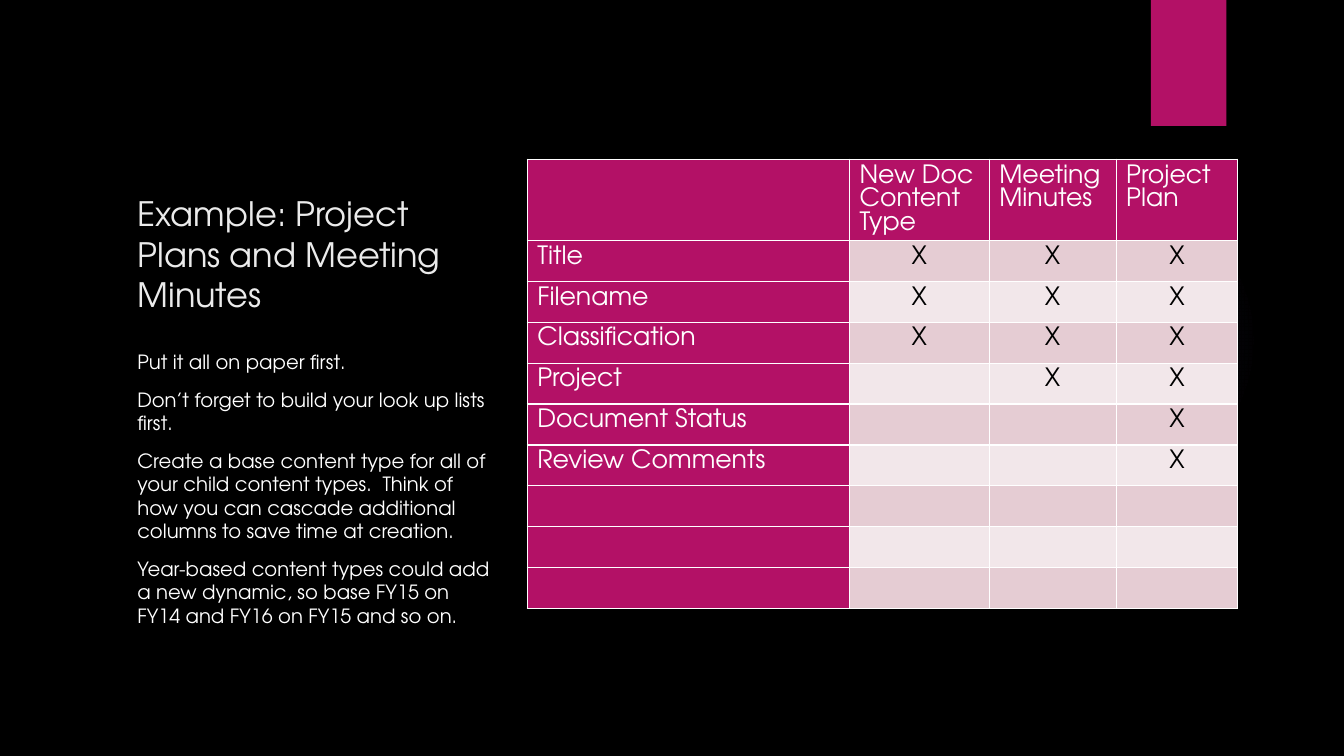
from typing import NamedTuple

from lxml import etree
from pptx import Presentation
from pptx.dml.color import RGBColor
from pptx.enum.shapes import MSO_SHAPE
from pptx.enum.text import MSO_ANCHOR, MSO_AUTO_SIZE, PP_ALIGN
from pptx.oxml import parse_xml
from pptx.oxml.ns import nsdecls, qn
from pptx.util import Pt

LEFT, CENTER = PP_ALIGN.LEFT, PP_ALIGN.CENTER
TOP, BOTTOM = MSO_ANCHOR.TOP, MSO_ANCHOR.BOTTOM
NO_FIT = MSO_AUTO_SIZE.NONE
OVAL, RECTANGLE = MSO_SHAPE.OVAL, MSO_SHAPE.RECTANGLE

FONT = "TeX Gyre Adventor"
BLACK = RGBColor(0x00, 0x00, 0x00)
WHITE = RGBColor(0xFF, 0xFF, 0xFF)
OFF_WHITE = RGBColor(0xEB, 0xEB, 0xEB)
MAGENTA = RGBColor(0xB3, 0x11, 0x66)
BANDS = (RGBColor(0xE5, 0xCC, 0xD3), RGBColor(0xF2, 0xE7, 0xEA))
GLOW = RGBColor(0x9B, 0x6B, 0xF2)
GLOW_STOPS = ((0, 7), (36, 6), (69, 0))

TEXT_LEFT, TEXT_WIDTH = 91, 267.8
COLUMN_WIDTHS = (230.2, 99.8, 90.7, 86.9)
HEADER_HEIGHT, ROW_HEIGHT = 58, 29.2


class Row(NamedTuple):
    label: str
    marks: str


HEADERS = ("", "New Doc Content Type", "Meeting Minutes", "Project Plan")
ROWS = (
    Row("Title", "XXX"),
    Row("Filename", "XXX"),
    Row("Classification", "XXX"),
    Row("Project", "-XX"),
    Row("Document Status", "--X"),
    Row("Review Comments", "--X"),
    Row("", "---"),
    Row("", "---"),
    Row("", "---"),
)
ADVICE = (
    "Put it all on paper first.",
    "Don’t forget to build your look up lists first.",
    "Create a base content type for all of your child content types.  Think of "
    "how you can cascade additional columns to save time at creation.",
    "Year-based content types could add a new dynamic, so base FY15 on FY14 "
    "and FY16 on FY15 and so on.",
)


def add_run(p, text: str, size: float, color: RGBColor) -> None:
    r = p.add_run()
    r.text = text
    r.font.name = FONT
    r.font.size = Pt(size)
    r.font.bold = False
    r.font.color.rgb = color


def set_frame(tf, anchor) -> None:
    tf.word_wrap = True
    tf.auto_size = NO_FIT
    tf.vertical_anchor = anchor


def add_plain_shape(s, kind, x: float, y: float, w: float, h: float):
    sp = s.shapes.add_shape(kind, Pt(x), Pt(y), Pt(w), Pt(h))
    sp.shadow.inherit = False
    sp.line.fill.background()
    return sp


def add_glow(s) -> None:
    sp = add_plain_shape(s, OVAL, 677.5, 131.8, 221.8, 221.8)
    stops = "".join(
        f'<a:gs pos="{pos * 1000}"><a:srgbClr val="{GLOW}">'
        f'<a:alpha val="{alpha * 1000}"/></a:srgbClr></a:gs>'
        for pos, alpha in GLOW_STOPS
    )
    gradient = parse_xml(
        f'<a:gradFill {nsdecls("a")}><a:gsLst>{stops}</a:gsLst><a:path path="circle">'
        '<a:fillToRect l="50000" t="50000" r="50000" b="50000"/></a:path></a:gradFill>'
    )
    sp.element.spPr.find(qn("a:prstGeom")).addnext(gradient)


def set_borders(cell) -> None:
    tcPr = cell._tc.get_or_add_tcPr()
    for i, side in enumerate(("lnL", "lnR", "lnT", "lnB")):
        ln = etree.Element(qn(f"a:{side}"), w=str(Pt(1)))
        fill = etree.SubElement(ln, qn("a:solidFill"))
        etree.SubElement(fill, qn("a:srgbClr"), val=str(WHITE))
        tcPr.insert(i, ln)


def fill_cell(cell, text: str, fill: RGBColor, color: RGBColor, align) -> None:
    cell.fill.solid()
    cell.fill.fore_color.rgb = fill
    set_borders(cell)
    p = cell.text_frame.paragraphs[0]
    p.alignment = align
    if text:
        add_run(p, text, 18, color)


def add_content_table(s) -> None:
    height = HEADER_HEIGHT + ROW_HEIGHT * len(ROWS)
    table = s.shapes.add_table(
        len(ROWS) + 1, len(HEADERS), Pt(376.6), Pt(113.8),
        Pt(sum(COLUMN_WIDTHS)), Pt(height),
    ).table
    for column, width in zip(table.columns, COLUMN_WIDTHS):
        column.width = Pt(width)
    for row in table.rows:
        row.height = Pt(ROW_HEIGHT)
    table.rows[0].height = Pt(HEADER_HEIGHT)
    for j, header in enumerate(HEADERS):
        fill_cell(table.cell(0, j), header, MAGENTA, WHITE, LEFT)
    for i, row in enumerate(ROWS, 1):
        fill_cell(table.cell(i, 0), row.label, MAGENTA, WHITE, LEFT)
        for j, mark in enumerate(row.marks, 1):
            text = mark.strip("-")
            fill_cell(table.cell(i, j), text, BANDS[(i - 1) % 2], BLACK, CENTER)


def set_title(s) -> None:
    title = s.shapes.title
    title.left, title.top = Pt(TEXT_LEFT), Pt(114.2)
    title.width, title.height = Pt(TEXT_WIDTH), Pt(113.8)
    set_frame(title.text_frame, BOTTOM)
    p = title.text_frame.paragraphs[0]
    p.alignment = LEFT
    add_run(p, "Example: Project Plans and Meeting Minutes", 24, OFF_WHITE)


def add_advice(s) -> None:
    tf = s.shapes.add_textbox(
        Pt(TEXT_LEFT), Pt(246.5), Pt(TEXT_WIDTH), Pt(228.2)
    ).text_frame
    set_frame(tf, TOP)
    for i, text in enumerate(ADVICE):
        p = tf.add_paragraph() if i else tf.paragraphs[0]
        p.space_before = Pt(10 if i else 0)
        add_run(p, text, 14, WHITE)


def main() -> None:
    prs = Presentation()
    prs.slide_width, prs.slide_height = Pt(960), Pt(540)
    s = prs.slides.add_slide(prs.slide_layouts[5])
    s.background.fill.solid()
    s.background.fill.fore_color.rgb = BLACK
    add_glow(s)
    ribbon = add_plain_shape(s, RECTANGLE, 822, 0, 54, 90)
    ribbon.fill.solid()
    ribbon.fill.fore_color.rgb = MAGENTA
    set_title(s)
    add_content_table(s)
    add_advice(s)
    prs.save("out.pptx")


if __name__ == "__main__":
    main()
